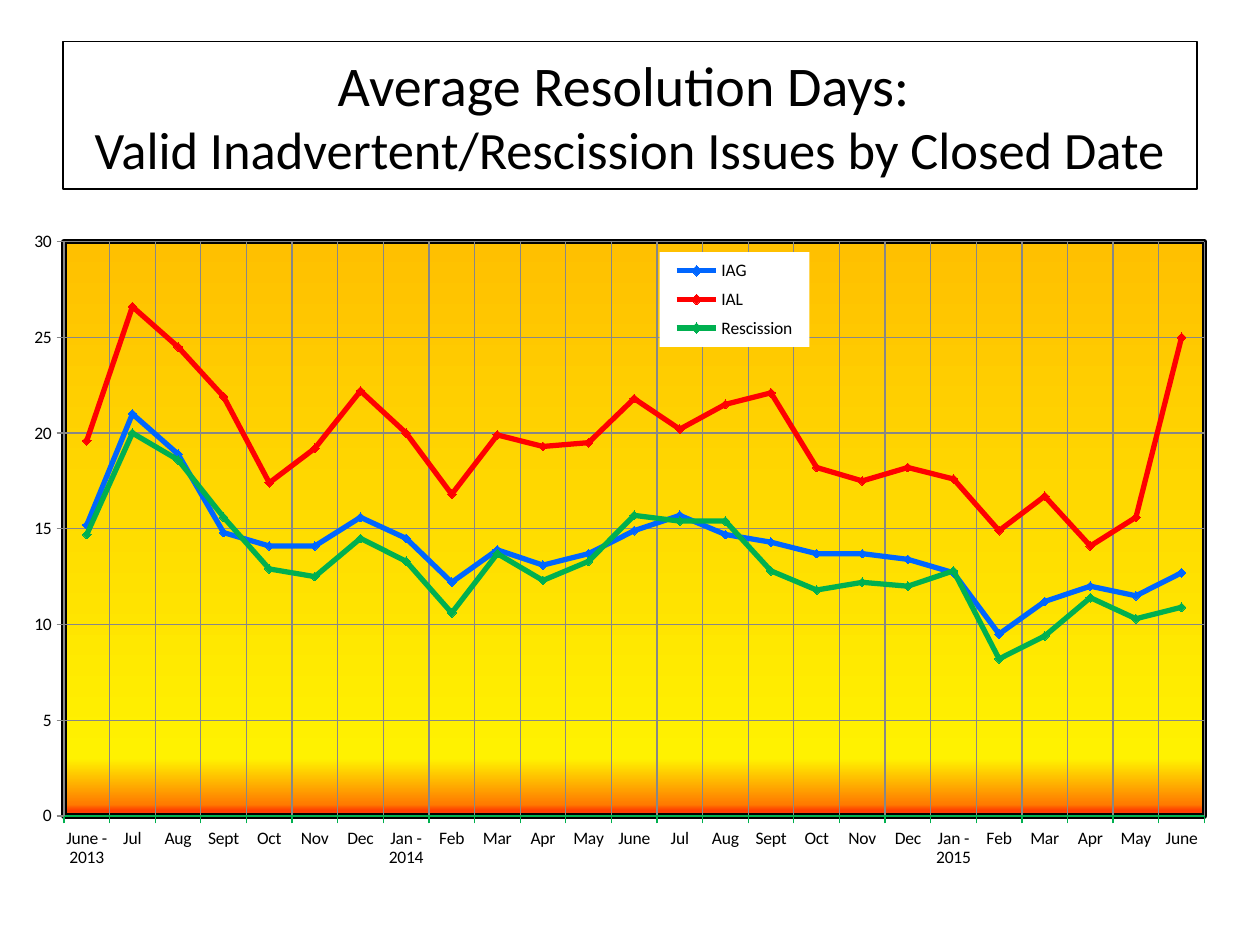
import pptx
import pptx.chart.data
import pptx.dml.color
import pptx.enum.chart
import pptx.enum.text
import pptx.oxml
import pptx.oxml.ns
import pptx.util
from pptx.util import Inches, Pt

COLORS = {"text": "000000", "paper": "FFFFFF", "grid": "878787",
          "IAG": "0066FF", "IAL": "FF0000", "Rescission": "00B050"}
SUNSET = {0: "FFC000", 90: "FFF200", 98: "FF7A00", 99: "FF3F00"}
NS = pptx.oxml.ns.nsdecls("c", "a")
qn = pptx.oxml.ns.qn


def rgb(name):
    return pptx.dml.color.RGBColor.from_string(COLORS[name])


def place(element, index, box, inner=""):
    for old in element.findall(qn("c:layout")):
        element.remove(old)
    sizes = "".join(f'<c:{key} val="{value}"/>' for key, value in zip("xywh", box))
    element.insert(index, pptx.oxml.parse_xml(
        f'<c:layout {NS}><c:manualLayout>{inner}<c:xMode val="edge"/>'
        f'<c:yMode val="edge"/>{sizes}</c:manualLayout></c:layout>'))


deck = pptx.Presentation()
deck.slide_width, deck.slide_height = Inches(10), Inches(7.5)
slide = deck.slides.add_slide(deck.slide_layouts[5])

heading = slide.shapes.title
for name, value in {"left": 0.5, "top": 0.33, "width": 9, "height": 1.17}.items():
    setattr(heading, name, Inches(value))
heading.line.color.rgb = rgb("text")
heading.line.width = Pt(0.75)
heading.text_frame.vertical_anchor = pptx.enum.text.MSO_ANCHOR.MIDDLE
heading.text_frame.auto_size = pptx.enum.text.MSO_AUTO_SIZE.NONE
heading_lines = heading.text_frame.paragraphs[0]
heading_lines.alignment = pptx.enum.text.PP_ALIGN.CENTER
for wording, size in (("Average Resolution Days: ", 32),
                      ("Valid Inadvertent/Rescission Issues by Closed Date", 30)):
    if heading_lines.runs:
        heading_lines.add_line_break()
    run = heading_lines.add_run()
    run.text = wording
    for name, value in {"size": Pt(size), "name": "Calibri"}.items():
        setattr(run.font, name, value)
    run.font.color.rgb = rgb("text")

resolution_days = pptx.chart.data.CategoryChartData()
resolution_days.categories = [
    "June - 2013", "Jul", "Aug", "Sept", "Oct", "Nov", "Dec",
    "Jan - 2014", "Feb", "Mar", "Apr", "May", "June", "Jul", "Aug", "Sept", "Oct", "Nov", "Dec",
    "Jan - 2015", "Feb", "Mar", "Apr", "May", "June"]
issues = {
    "IAG": [15.2, 21, 18.9, 14.8, 14.1, 14.1, 15.6, 14.5, 12.2, 13.9, 13.1, 13.7, 14.9,
            15.7, 14.7, 14.3, 13.7, 13.7, 13.4, 12.7, 9.5, 11.2, 12, 11.5, 12.7],
    "IAL": [19.6, 26.6, 24.5, 21.9, 17.4, 19.2, 22.2, 20, 16.8, 19.9, 19.3, 19.5, 21.8,
            20.2, 21.5, 22.1, 18.2, 17.5, 18.2, 17.6, 14.9, 16.7, 14.1, 15.6, 25],
    "Rescission": [14.7, 20, 18.6, 15.6, 12.9, 12.5, 14.5, 13.3, 10.6, 13.7, 12.3, 13.3, 15.7,
                   15.4, 15.4, 12.8, 11.8, 12.2, 12, 12.8, 8.2, 9.4, 11.4, 10.3, 10.9],
}
for issue, days in issues.items():
    resolution_days.add_series(issue, days)

trend = slide.shapes.add_chart(
    pptx.enum.chart.XL_CHART_TYPE.LINE_MARKERS, Inches(0.17), Inches(1.67),
    Inches(9.65), Inches(5.5), resolution_days).chart
trend.has_title = False
trend.font.size = Pt(10)
trend.font.name = "Calibri"
trend.font.color.rgb = rgb("text")
trend.plots[0].vary_by_categories = False

for line in trend.plots[0].series:
    line.smooth = False
    line.format.line.color.rgb = rgb(line.name)
    line.format.line.width = Pt(3)
    line.marker.style = pptx.enum.chart.XL_MARKER_STYLE.DIAMOND
    line.marker.size = 5
    line.marker.format.fill.solid()
    line.marker.format.fill.fore_color.rgb = rgb(line.name)
    line.marker.format.line.color.rgb = rgb(line.name)

months, day_scale = trend.category_axis, trend.value_axis
for name, value in {"minimum_scale": 0, "maximum_scale": 30, "major_unit": 5}.items():
    setattr(day_scale, name, value)
for axis, color in ((months, "Rescission"), (day_scale, "grid")):
    axis.has_major_gridlines = True
    axis.major_tick_mark = pptx.enum.chart.XL_TICK_MARK.OUTSIDE
    axis.format.line.color.rgb = rgb(color)
    axis.format.line.width = Pt(0.75)
    axis.major_gridlines.format.line.color.rgb = rgb("grid")
    axis.major_gridlines.format.line.width = Pt(0.75)

plot_area = trend.plots[0]._element.getparent()
place(plot_area, 0, (0.035, 0.045, 0.938, 0.829), '<c:layoutTarget val="inner"/>')
stops = "".join(f'<a:gs pos="{percent * 1000}"><a:srgbClr val="{color}"/></a:gs>'
                for percent, color in SUNSET.items())
plot_area.append(pptx.oxml.parse_xml(
    f'<c:spPr {NS}><a:gradFill><a:gsLst>{stops}</a:gsLst><a:lin ang="5400000" scaled="0"/>'
    f'</a:gradFill><a:ln w="{Pt(3)}"><a:solidFill><a:srgbClr val="{COLORS["text"]}"/>'
    '</a:solidFill></a:ln></c:spPr>'))

trend.has_legend = True
trend.legend.position = pptx.enum.chart.XL_LEGEND_POSITION.RIGHT
trend.legend.include_in_layout = True
key = trend.legend._element
place(key, 1, (0.525, 0.06, 0.123, 0.137))
key.find(qn("c:overlay")).addnext(pptx.oxml.parse_xml(
    f'<c:spPr {NS}><a:solidFill><a:srgbClr val="{COLORS["paper"]}"/></a:solidFill></c:spPr>'))

deck.save("out.pptx")
